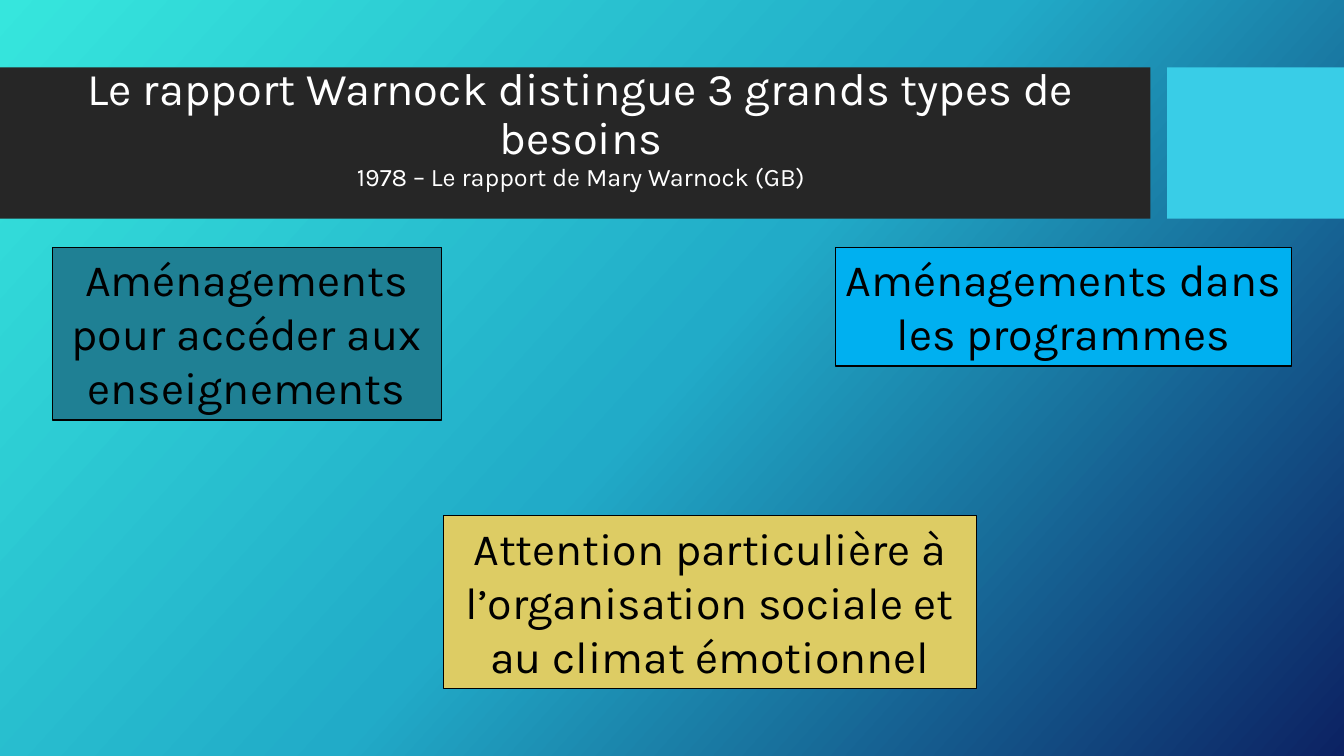
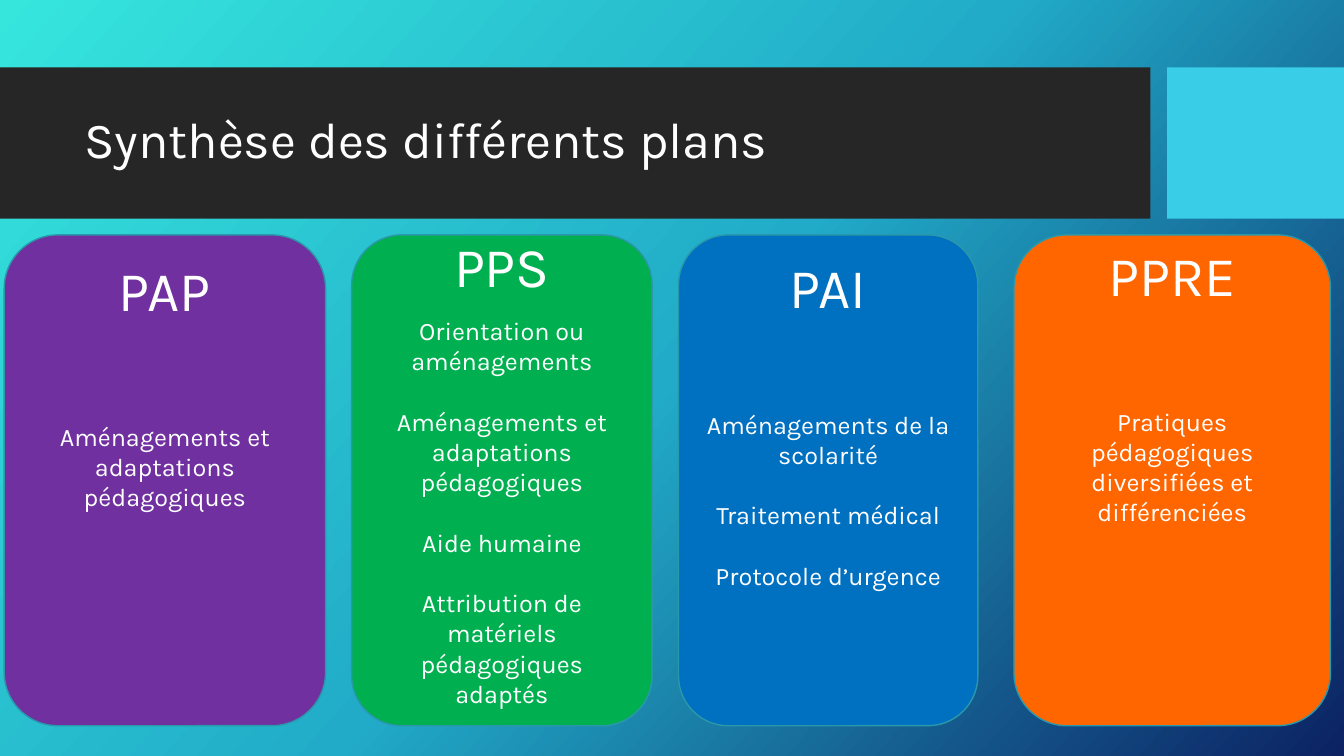
from lxml.etree import SubElement
from pptx import Presentation
from pptx.dml.color import RGBColor
from pptx.enum.shapes import MSO_SHAPE
from pptx.enum.text import MSO_ANCHOR, PP_ALIGN
from pptx.oxml.ns import qn
from pptx.util import Pt

# Shared look
SLIDE_WIDTH, SLIDE_HEIGHT = 960, 540
FONT = "Karla"
WHITE, BLACK = "FFFFFF", "000000"
BAND_DARK, BAND_ACCENT, CARD_LINE = "262626", "39CDE7", "2A98AB"
BACKGROUND_STOPS = [(0, "36E6DD"), (50, "21ABC8"), (100, "0C2263")]
BACKGROUND_ANGLE = 42
BAND_TOP, BAND_HEIGHT = 48.2, 108
CARD_TOP, CARD_HEIGHT = 167.8, 350.6
BODY_GAP = 21.6


def color(hex_value):
    return RGBColor.from_string(hex_value)


def paint_background(slide):
    fill = slide.background.fill
    fill.gradient()
    fill.gradient_angle = 360 - BACKGROUND_ANGLE
    stops = slide.element.find(".//" + qn("a:gsLst"))
    for stop in list(stops):
        stops.remove(stop)
    for position, hex_value in BACKGROUND_STOPS:
        stop = SubElement(stops, qn("a:gs"), pos=str(position * 1000))
        SubElement(stop, qn("a:srgbClr"), val=hex_value)


def add_box(slide, kind, box, fill, line=None):
    shape = slide.shapes.add_shape(kind, *map(Pt, box))
    shape.shadow.inherit = False
    shape.fill.solid()
    shape.fill.fore_color.rgb = color(fill)
    if line:
        shape.line.color.rgb = color(line)
        shape.line.width = Pt(1)
    else:
        shape.line.fill.background()
    return shape


def write(shape, lines, text_color, align=PP_ALIGN.CENTER,
          anchor=MSO_ANCHOR.MIDDLE, line_spacing=None):
    """Fill a shape with lines given as (text, size, space before)."""
    frame = shape.text_frame
    frame.word_wrap = True
    frame.vertical_anchor = anchor
    for index, (text, size, space) in enumerate(lines):
        paragraph = frame.add_paragraph() if index else frame.paragraphs[0]
        paragraph.alignment = align
        if space:
            paragraph.space_before = Pt(space)
        if line_spacing:
            paragraph.line_spacing = line_spacing
        run = paragraph.add_run()
        run.text = text
        run.font.name = FONT
        run.font.size = Pt(size)
        run.font.color.rgb = color(text_color)


def add_base_slide(presentation, title_box, title_lines, align):
    """Background, the two title bands and the title."""
    slide = presentation.slides.add_slide(presentation.slide_layouts[6])
    paint_background(slide)
    for left, width, fill in [(0, 821.8, BAND_DARK), (833.6, 126.4, BAND_ACCENT)]:
        add_box(slide, MSO_SHAPE.RECTANGLE, (left, BAND_TOP, width, BAND_HEIGHT), fill)
    title = slide.shapes.add_textbox(*map(Pt, title_box))
    write(title, title_lines, WHITE, align, line_spacing=0.9)
    return slide


def add_need(slide, box, fill, texts):
    shape = add_box(slide, MSO_SHAPE.RECTANGLE, box, fill, BLACK)
    write(shape, [(text, 32, 0) for text in texts], BLACK, anchor=MSO_ANCHOR.TOP)


def add_plan_card(slide, left, width, fill, name, measures, name_gap, lift):
    """Rounded card; lift is the space kept free below the text."""
    shape = add_box(slide, MSO_SHAPE.ROUNDED_RECTANGLE,
                    (left, CARD_TOP, width, CARD_HEIGHT), fill, CARD_LINE)
    shape.text_frame.margin_top = Pt(0)
    shape.text_frame.margin_bottom = Pt(lift)
    lines = [(name, 40, 0)]
    for index, measure in enumerate(measures):
        lines.append((measure, 18, BODY_GAP if index else name_gap))
    write(shape, lines, WHITE)


def build_needs_slide(presentation):
    slide = add_base_slide(
        presentation, (0, 43, 830, 98),
        [("Le rapport Warnock distingue 3 grands types de besoins", 32.4, 0),
         ("1978 – Le rapport de Mary Warnock (GB)", 18, 0)],
        PP_ALIGN.CENTER)
    add_need(slide, (37.4, 176.6, 277.9, 123.6), "1F8094",
             ["Aménagements pour accéder aux enseignements"])
    add_need(slide, (596.9, 176.6, 325.6, 84.8), "00B0F0",
             ["Aménagements dans les programmes"])
    add_need(slide, (316.8, 368.4, 380.6, 123.6), "DDCC64",
             ["Attention particulière à", "l’organisation sociale et",
              "au climat émotionnel"])


def build_plans_slide(presentation):
    slide = add_base_slide(
        presentation, (53.3, 59, 756.7, 85),
        [("Synthèse des différents plans", 36, 0)], PP_ALIGN.LEFT)
    # Left, width, fill, name, measures, gap under the name, lift
    plans = [
        (3, 229.6, "7030A0", "PAP",
         ["Aménagements et adaptations pédagogiques"], 70, 138),
        (251.2, 214.6, "00B050", "PPS",
         ["Orientation ou aménagements",
          "Aménagements et adaptations pédagogiques",
          "Aide humaine",
          "Attribution de matériels pédagogiques adaptés"], 12, 15),
        (484.7, 213.8, "0070C0", "PAI",
         ["Aménagements de la scolarité", "Traitement médical",
          "Protocole d’urgence"], 63.5, 84),
        (724.3, 226.1, "FF6600", "PPRE",
         ["Pratiques pédagogiques diversifiées et différenciées"], 70, 138),
    ]
    for plan in plans:
        add_plan_card(slide, *plan)


def main():
    presentation = Presentation()
    presentation.slide_width = Pt(SLIDE_WIDTH)
    presentation.slide_height = Pt(SLIDE_HEIGHT)
    build_needs_slide(presentation)
    build_plans_slide(presentation)
    presentation.save("out.pptx")


if __name__ == "__main__":
    main()
